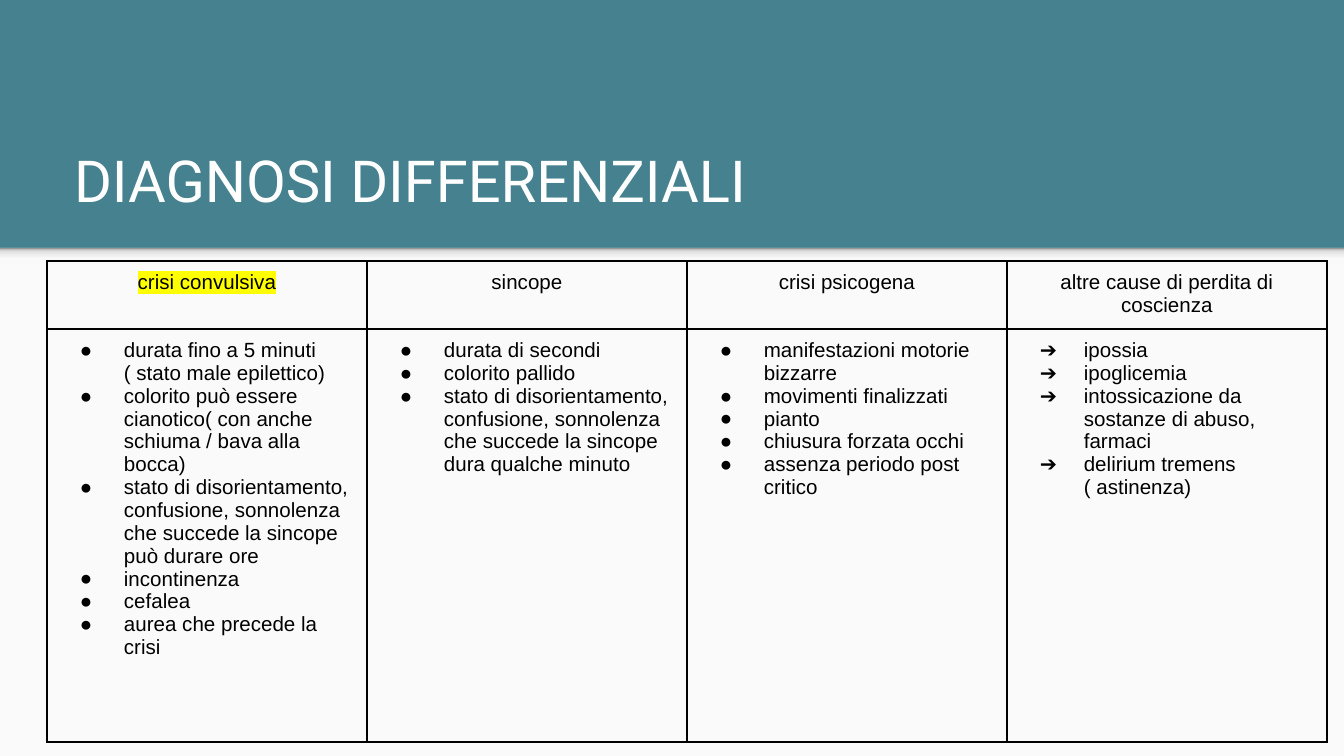
from lxml.etree import SubElement
from pptx import Presentation
from pptx.dml.color import RGBColor
from pptx.enum.shapes import MSO_SHAPE
from pptx.enum.text import MSO_ANCHOR, MSO_AUTO_SIZE, PP_ALIGN
from pptx.oxml import parse_xml
from pptx.oxml.ns import nsdecls, qn
from pptx.util import Pt

COLORS = {
    "teal": "45818E", "paper": "FAFAFA", "white": "FFFFFF",
    "black": "000000", "yellow": "FFFF00",
}
SHADE_STOPS = [(0, "F9F9F9"), (36, "F9F9F9"), (80, "DEDEDE"), (100, "999999")]
TITLE = "DIAGNOSI DIFFERENZIALI"
COLUMNS = [
    {"head": "crisi convulsiva", "highlight": "yellow", "bullet": "●", "items": [
        "durata fino a 5 minuti ( stato male epilettico)",
        "colorito può essere cianotico( con anche schiuma / bava alla bocca)",
        "stato di disorientamento, confusione, sonnolenza che succede la sincope può durare ore",
        "incontinenza",
        "cefalea",
        "aurea che precede la crisi",
    ]},
    {"head": "sincope", "bullet": "●", "items": [
        "durata di secondi",
        "colorito pallido",
        "stato di disorientamento, confusione, sonnolenza che succede la sincope dura qualche minuto",
    ]},
    {"head": "crisi psicogena", "bullet": "●", "items": [
        "manifestazioni motorie bizzarre",
        "movimenti finalizzati",
        "pianto",
        "chiusura forzata occhi",
        "assenza periodo post critico",
    ]},
    {"head": "altre cause di perdita di coscienza", "bullet": "➔", "items": [
        "ipossia",
        "ipoglicemia",
        "intossicazione da sostanze di abuso, farmaci",
        "delirium tremens ( astinenza)",
    ]},
]

PAGE_WIDTH, PAGE_HEIGHT = 1344, 756
BAND_HEIGHT, SHADE_HEIGHT = 248, 16
TABLE_LEFT, TABLE_TOP = 47, 261
COLUMN_WIDTH = 320
ROW_HEIGHTS = [68, 413]
CELL_INSET, TITLE_INSET = 10, 13
BULLET_INDENT, BULLET_HANG = 67, 44


def px(count):
    return round(count * 914400 / 134.4)


def rgb(name):
    return RGBColor.from_string(COLORS[name])


def set_insets(target, inset):
    for side in ("left", "right", "top", "bottom"):
        setattr(target, f"margin_{side}", px(inset))


def write(para, text, size=11, font="Arial", color="black",
          align=PP_ALIGN.LEFT, bullet=None, highlight=None):
    para.alignment = align
    span = para.add_run()
    span.text = text
    span.font.size = Pt(size)
    span.font.name = font
    span.font.color.rgb = rgb(color)
    if highlight:
        mark = parse_xml(f'<a:highlight {nsdecls("a")}>'
                         f'<a:srgbClr val="{COLORS[highlight]}"/></a:highlight>')
        span.font._element.find(qn("a:solidFill")).addnext(mark)
    if bullet:
        props = para._p.get_or_add_pPr()
        props.set("marL", str(px(BULLET_INDENT)))
        props.set("indent", str(-px(BULLET_HANG)))
        bullet_color = SubElement(props, qn("a:buClr"))
        SubElement(bullet_color, qn("a:srgbClr"), val=COLORS[color])
        SubElement(props, qn("a:buFont"), typeface=font)
        SubElement(props, qn("a:buChar"), char=bullet)


def add_panel(page, top, height):
    panel = page.shapes.add_shape(
        MSO_SHAPE.RECTANGLE, 0, px(top), px(PAGE_WIDTH), px(height))
    panel.shadow.inherit = False
    panel.line.fill.background()
    panel.fill.solid()
    panel.fill.fore_color.rgb = rgb("paper")
    return panel


def shade(panel):
    stops = "".join(f'<a:gs pos="{place * 1000}"><a:srgbClr val="{color}"/></a:gs>'
                    for place, color in SHADE_STOPS)
    gradient = parse_xml(f'<a:gradFill {nsdecls("a")}><a:gsLst>{stops}</a:gsLst>'
                         '<a:lin ang="16200000" scaled="0"/></a:gradFill>')
    props = panel._element.spPr
    props.replace(props.find(qn("a:solidFill")), gradient)


def format_cell(cell):
    set_insets(cell, CELL_INSET)
    cell.vertical_anchor = MSO_ANCHOR.TOP
    cell.fill.background()
    for index, side in enumerate("LRTB"):
        border = parse_xml(
            f'<a:ln{side} {nsdecls("a")} w="{Pt(1)}"><a:solidFill>'
            f'<a:srgbClr val="{COLORS["black"]}"/></a:solidFill></a:ln{side}>')
        cell._tc.get_or_add_tcPr().insert(index, border)


def add_title(page):
    box = page.shapes.title
    box.left, box.top, box.width, box.height = map(px, (61, 114, 1208, 113))
    frame = box.text_frame
    frame.auto_size = MSO_AUTO_SIZE.NONE
    frame.vertical_anchor = MSO_ANCHOR.BOTTOM
    set_insets(frame, TITLE_INSET)
    write(frame.paragraphs[0], TITLE, size=31, font="Roboto", color="white")


def add_comparison(page):
    table = page.shapes.add_table(
        len(ROW_HEIGHTS), len(COLUMNS), px(TABLE_LEFT), px(TABLE_TOP),
        px(COLUMN_WIDTH * len(COLUMNS)), px(sum(ROW_HEIGHTS))).table
    table.first_row = table.horz_banding = False
    for row, height in zip(table.rows, ROW_HEIGHTS):
        row.height = px(height)
    for index, column in enumerate(COLUMNS):
        table.columns[index].width = px(COLUMN_WIDTH)
        head, body = table.cell(0, index), table.cell(1, index)
        format_cell(head)
        format_cell(body)
        write(head.text_frame.paragraphs[0], column["head"],
              align=PP_ALIGN.CENTER, highlight=column.get("highlight"))
        for number, item in enumerate(column["items"]):
            frame = body.text_frame
            para = frame.add_paragraph() if number else frame.paragraphs[0]
            write(para, item, bullet=column["bullet"])


def main():
    deck = Presentation()
    deck.slide_width, deck.slide_height = px(PAGE_WIDTH), px(PAGE_HEIGHT)
    page = deck.slides.add_slide(deck.slide_layouts[5])
    page.background.fill.solid()
    page.background.fill.fore_color.rgb = rgb("teal")
    add_panel(page, BAND_HEIGHT, PAGE_HEIGHT - BAND_HEIGHT)
    shade(add_panel(page, BAND_HEIGHT, SHADE_HEIGHT))
    add_title(page)
    add_comparison(page)
    deck.save("out.pptx")


if __name__ == "__main__":
    main()
